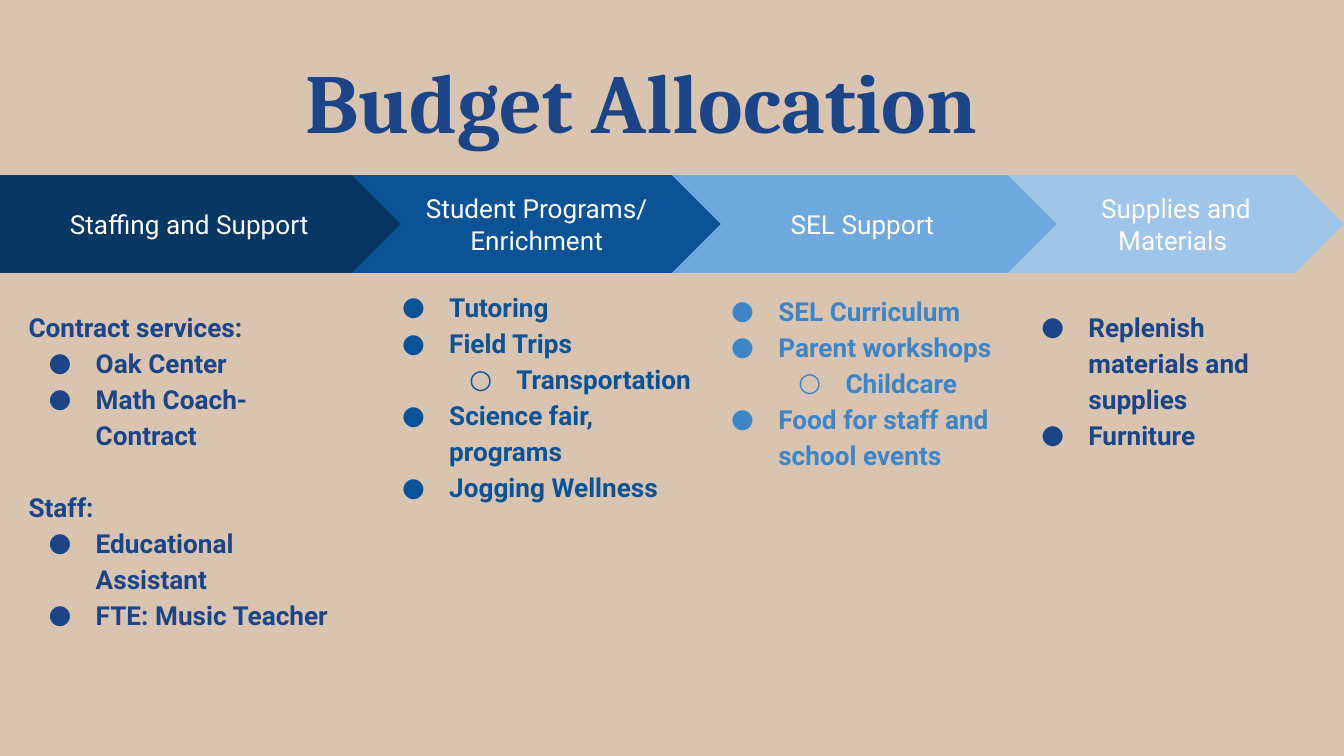
from lxml.etree import SubElement
from pptx import Presentation
from pptx.dml.color import RGBColor
from pptx.enum.shapes import MSO_SHAPE as Shape
from pptx.enum.text import MSO_ANCHOR as Anchor, MSO_AUTO_SIZE as AutoSize, PP_ALIGN as Align
from pptx.oxml.ns import qn
from pptx.util import Cm, Pt

SAND = RGBColor(0xD9, 0xC4, 0xB1)
WHITE = RGBColor(0xFF, 0xFF, 0xFF)
INK = RGBColor(0x1C, 0x45, 0x87)
NAVY = RGBColor(0x07, 0x37, 0x63)
BLUE = RGBColor(0x0B, 0x53, 0x94)
MID_BLUE = RGBColor(0x3D, 0x85, 0xC6)
SKY = RGBColor(0x6F, 0xA8, 0xDC)
PALE = RGBColor(0x9F, 0xC5, 0xE8)

HEADING, ITEM, SUBITEM = "heading", "item", "subitem"
BULLETS = {ITEM: ("●", 0, 1.27), SUBITEM: ("○", 1, 2.54)}
HANGING = 0.89
ARROW_TOP, ARROW_HEIGHT = 3.31, 1.85
LIST_HEIGHT = 7.26
GROUP_GAP = 19.3

# Arrow and list extents are (left, width) and (left, top, width) in cm.
COLUMNS = [
    dict(title=["Staffing and Support"], fill=NAVY, color=INK,
         arrow=(0, 7.62), listing=(0.29, 5.54, 6.53),
         lines=[(HEADING, "Contract services:"), (ITEM, "Oak Center"),
                (ITEM, "Math Coach-Contract"), (HEADING, "Staff:"),
                (ITEM, "Educational Assistant"), (ITEM, "FTE: Music Teacher")]),
    dict(title=["Student Programs/", "Enrichment"], fill=BLUE, color=BLUE,
         arrow=(6.65, 6.99), listing=(6.97, 5.17, 6.5),
         lines=[(ITEM, "Tutoring"), (ITEM, "Field Trips"),
                (SUBITEM, "Transportation"), (ITEM, "Science fair, programs"),
                (ITEM, "Jogging Wellness")]),
    dict(title=["SEL Support "], fill=SKY, color=MID_BLUE,
         arrow=(12.7, 7.32), listing=(13.19, 5.24, 5.87),
         lines=[(ITEM, "SEL Curriculum"), (ITEM, "Parent workshops"),
                (SUBITEM, "Childcare"), (ITEM, "Food for staff and school events")]),
    dict(title=["Supplies and Materials "], fill=PALE, color=INK,
         arrow=(19.05, 6.35), listing=(19.05, 5.54, 5.87),
         lines=[(ITEM, "Replenish materials and supplies"), (ITEM, "Furniture")]),
]


def add_bullet(para, kind, color, size, font):
    mark, level, indent = BULLETS[kind]
    para.level = level
    properties = para._p.get_or_add_pPr()
    properties.set("marL", str(Cm(indent)))
    properties.set("indent", str(-Cm(HANGING)))
    bullet_color = SubElement(properties, qn("a:buClr"))
    SubElement(bullet_color, qn("a:srgbClr"), val=str(color))
    SubElement(properties, qn("a:buSzPts"), val=str(size * 100))
    SubElement(properties, qn("a:buFont"), typeface=font)
    SubElement(properties, qn("a:buChar"), char=mark)


def write(shape, lines, color, size=14, font="Roboto", bold=False,
          align=Align.LEFT, anchor=Anchor.TOP, spacing=None):
    """Fill a shape with (kind, text) lines in one format."""
    frame = shape.text_frame
    frame.word_wrap = True
    frame.vertical_anchor = anchor
    frame.margin_left = frame.margin_right = Cm(0.25)
    frame.margin_top = frame.margin_bottom = Cm(0.25)
    for index, (kind, text) in enumerate(lines):
        para = frame.add_paragraph() if index else frame.paragraphs[0]
        para.alignment = align
        if spacing:
            para.line_spacing = spacing
        if kind == HEADING and index and spacing:
            para.space_before = Pt(GROUP_GAP)
        if kind in BULLETS:
            add_bullet(para, kind, color, size, font)
        span = para.add_run()
        span.text = text
        span.font.name = font
        span.font.size = Pt(size)
        span.font.bold = bold
        span.font.color.rgb = color


def add_box(page, left, top, width, height):
    return page.shapes.add_textbox(Cm(left), Cm(top), Cm(width), Cm(height))


def add_column(page, column, first):
    left, width = column["arrow"]
    arrow = page.shapes.add_shape(Shape.PENTAGON if first else Shape.CHEVRON,
                                  Cm(left), Cm(ARROW_TOP), Cm(width), Cm(ARROW_HEIGHT))
    arrow.shadow.inherit = False
    arrow.fill.solid()
    arrow.fill.fore_color.rgb = column["fill"]
    arrow.line.fill.background()
    write(arrow, [(HEADING, text) for text in column["title"]], WHITE,
          align=Align.CENTER, anchor=Anchor.MIDDLE)
    listing = add_box(page, *column["listing"], LIST_HEIGHT)
    write(listing, column["lines"], column["color"], bold=True, spacing=1.15)


def main():
    deck = Presentation()
    deck.slide_width, deck.slide_height = Cm(25.4), Cm(14.29)
    page = deck.slides.add_slide(deck.slide_layouts[6])
    page.background.fill.solid()
    page.background.fill.fore_color.rgb = SAND

    title = add_box(page, 1.48, 0.69, 21.62, 2.44)
    write(title, [(HEADING, "Budget Allocation ")], INK, size=45, font="Cambria",
          bold=True, align=Align.CENTER)
    title.text_frame.auto_size = AutoSize.SHAPE_TO_FIT_TEXT

    for index, column in enumerate(COLUMNS):
        add_column(page, column, first=index == 0)
    deck.save("out.pptx")


if __name__ == "__main__":
    main()
